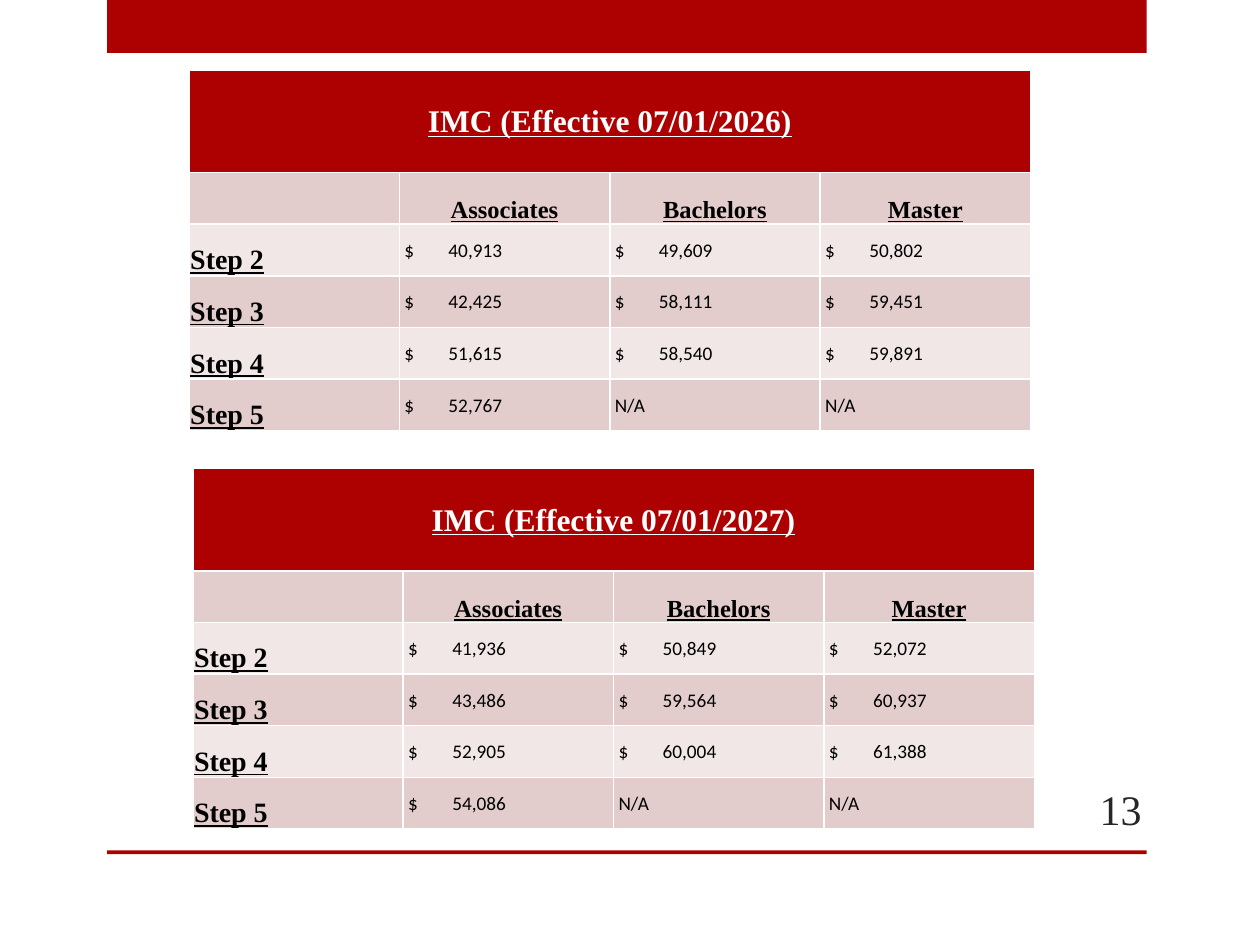
from dataclasses import dataclass

from lxml import etree
from pptx import Presentation
from pptx.dml.color import RGBColor
from pptx.enum import shapes, text
from pptx.oxml.ns import qn
from pptx.util import Inches, Pt

RED, BLACK, WHITE, INK = "AD0101", "000000", "FFFFFF", "262626"
BANDS = ("E3CCCC", "F1E7E7")
SERIF, SANS = "Times New Roman", "Calibri"
DEGREES = ("Associates", "Bachelors", "Master")
TITLE_HEIGHT, ROW_HEIGHT, COLUMN_WIDTH = 0.81, 0.41, 1.67
AMOUNT_TAB = 0.35


@dataclass
class TextStyle:
    size: float
    color: str = BLACK
    font: str = SERIF
    heading: bool = True  # bold and underlined
    align: text.PP_ALIGN = text.PP_ALIGN.LEFT
    anchor: text.MSO_ANCHOR = text.MSO_ANCHOR.BOTTOM
    left_margin: float = 0.01


@dataclass
class SalaryTable:
    left: float
    top: float
    title: str
    steps: dict[str, tuple[str, ...]]


TITLE = TextStyle(18, WHITE, align=text.PP_ALIGN.CENTER, anchor=text.MSO_ANCHOR.MIDDLE)
DEGREE = TextStyle(14, align=text.PP_ALIGN.CENTER)
STEP = TextStyle(16)
AMOUNT = TextStyle(11, font=SANS, heading=False, anchor=text.MSO_ANCHOR.MIDDLE, left_margin=0.04)
PAGE = TextStyle(24, INK, heading=False, align=text.PP_ALIGN.RIGHT)

SALARY_TABLES = (
    SalaryTable(1.5, 0.56, "IMC (Effective 07/01/2026)", {
        "Step 2": ("40,913", "49,609", "50,802"),
        "Step 3": ("42,425", "58,111", "59,451"),
        "Step 4": ("51,615", "58,540", "59,891"),
        "Step 5": ("52,767", "N/A", "N/A"),
    }),
    SalaryTable(1.53, 3.72, "IMC (Effective 07/01/2027)", {
        "Step 2": ("41,936", "50,849", "52,072"),
        "Step 3": ("43,486", "59,564", "60,937"),
        "Step 4": ("52,905", "60,004", "61,388"),
        "Step 5": ("54,086", "N/A", "N/A"),
    }),
)


def paint(fill, color: str) -> None:
    fill.solid()
    fill.fore_color.rgb = RGBColor.from_string(color)


def write(paragraph, words: str, style: TextStyle) -> None:
    paragraph.text = words
    paragraph.alignment = style.align
    for run in paragraph.runs:
        run.font.name = style.font
        run.font.size = Pt(style.size)
        run.font.bold = run.font.underline = style.heading
        run.font.color.rgb = RGBColor.from_string(style.color)


def add_tab_stop(paragraph, position: float) -> None:
    properties = paragraph._p.get_or_add_pPr()
    tabs = etree.SubElement(properties, qn("a:tabLst"))
    etree.SubElement(tabs, qn("a:tab"), pos=str(Inches(position)), algn="l")


def fill_cell(cell, words: str, style: TextStyle, color: str) -> None:
    paint(cell.fill, color)
    cell.margin_left = Inches(style.left_margin)
    cell.margin_right = cell.margin_top = Inches(0.01)
    cell.margin_bottom = 0
    cell.vertical_anchor = style.anchor
    paragraph = cell.text_frame.paragraphs[0]
    write(paragraph, words, style)
    if "\t" in words:
        add_tab_stop(paragraph, AMOUNT_TAB)


def add_bar(slide, top: float, height: float) -> None:
    bar = slide.shapes.add_shape(shapes.MSO_SHAPE.RECTANGLE, Inches(0.85), Inches(top),
                                 Inches(8.25), Inches(height))
    bar.shadow.inherit = False
    paint(bar.fill, RED)
    bar.line.fill.background()


def add_salary_table(slide, salary: SalaryTable) -> None:
    row_count, column_count = len(salary.steps) + 2, len(DEGREES) + 1
    table = slide.shapes.add_table(
        row_count, column_count, Inches(salary.left), Inches(salary.top),
        Inches(COLUMN_WIDTH * column_count),
        Inches(TITLE_HEIGHT + ROW_HEIGHT * (row_count - 1))).table
    for column in table.columns:
        column.width = Inches(COLUMN_WIDTH)
    for index, row in enumerate(table.rows):
        row.height = Inches(ROW_HEIGHT if index else TITLE_HEIGHT)

    # Title across all columns
    table.cell(0, 0).merge(table.cell(0, column_count - 1))
    fill_cell(table.cell(0, 0), salary.title, TITLE, RED)

    # Degree headings
    for column, degree in enumerate(("", *DEGREES)):
        fill_cell(table.cell(1, column), degree, DEGREE, BANDS[0])

    # One row for each step
    for row, (step, amounts) in enumerate(salary.steps.items(), start=2):
        band = BANDS[(row - 1) % 2]
        fill_cell(table.cell(row, 0), step, STEP, band)
        for column, amount in enumerate(amounts, start=1):
            words = amount if amount == "N/A" else f"$\t{amount}"
            fill_cell(table.cell(row, column), words, AMOUNT, band)


def add_page_number(slide, number: str) -> None:
    box = slide.shapes.add_textbox(Inches(8.33), Inches(6.22), Inches(0.83), Inches(0.4))
    frame = box.text_frame
    frame.word_wrap = True
    frame.vertical_anchor = text.MSO_ANCHOR.MIDDLE
    write(frame.paragraphs[0], number, PAGE)


def main() -> None:
    presentation = Presentation()
    presentation.slide_width, presentation.slide_height = Inches(10), Inches(7.5)
    slide = presentation.slides.add_slide(presentation.slide_layouts[6])

    # Top band and bottom rule
    add_bar(slide, 0, 0.42)
    add_bar(slide, 6.75, 0.03)

    add_page_number(slide, "13")
    for salary in SALARY_TABLES:
        add_salary_table(slide, salary)
    presentation.save("out.pptx")


if __name__ == "__main__":
    main()
